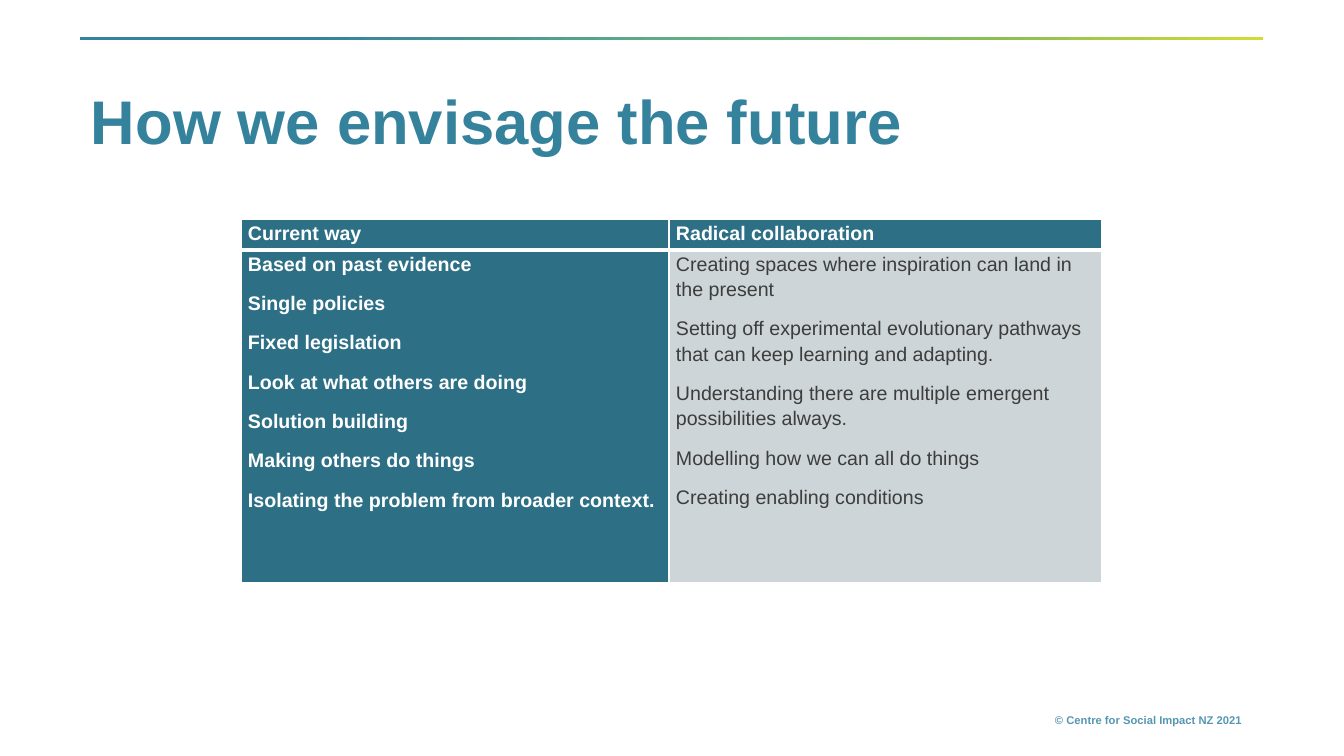
import dataclasses

import lxml.etree
import pptx
import pptx.dml.color
import pptx.enum.shapes
import pptx.enum.text
import pptx.oxml
import pptx.oxml.ns
import pptx.util

EMU_PER_PX = 914400 / 100.8


@dataclasses.dataclass(frozen=True)
class Theme:
    font: str = "Arial"
    title: str = "35829C"
    footer: str = "5596B2"
    header: str = "2D7086"
    panel: str = "CDD5D9"
    dark: str = "3C3D3C"
    white: str = "FFFFFF"
    rule: tuple = ((0, "35839C"), (20, "35839C"), (59, "69BA80"), (78, "8CBF52"), (100, "D2DC36"))
    title_size: int = 44
    table_size: int = 14
    footer_size: int = 8


def px(value):
    return pptx.util.Emu(round(value * EMU_PER_PX))


def rgb(color):
    return pptx.dml.color.RGBColor.from_string(color)


class SlideBuilder:
    def __init__(self, presentation, theme):
        self.theme = theme
        self.slide = presentation.slides.add_slide(presentation.slide_layouts[6])

    def styled_run(self, paragraph, text, size, color, bold=True):
        run = paragraph.add_run()
        run.text = text
        run.font.name = self.theme.font
        run.font.size = pptx.util.Pt(size)
        run.font.bold = bold
        run.font.color.rgb = rgb(color)

    def text_box(self, box, text, size, color, align, line_spacing=1.0):
        frame = self.slide.shapes.add_textbox(*map(px, box)).text_frame
        frame.word_wrap = True
        frame.vertical_anchor = pptx.enum.text.MSO_ANCHOR.MIDDLE
        paragraph = frame.paragraphs[0]
        paragraph.alignment = align
        paragraph.line_spacing = line_spacing
        self.styled_run(paragraph, text, size, color)

    def gradient_rule(self, box):
        shape = self.slide.shapes.add_shape(pptx.enum.shapes.MSO_SHAPE.RECTANGLE, *map(px, box))
        shape.shadow.inherit = False
        shape.line.fill.background()
        shape.fill.gradient()
        shape.fill.gradient_angle = 0
        stops = shape._element.spPr.find(".//" + pptx.oxml.ns.qn("a:gsLst"))
        for stop in list(stops):
            stops.remove(stop)
        for position, color in self.theme.rule:
            stop = lxml.etree.SubElement(stops, pptx.oxml.ns.qn("a:gs"), pos=str(position * 1000))
            lxml.etree.SubElement(stop, pptx.oxml.ns.qn("a:srgbClr"), val=color)

    def borders(self, cell, widths):
        properties = cell._tc.get_or_add_tcPr()
        for index, (side, width) in enumerate(zip("LRTB", widths)):
            line = pptx.oxml.parse_xml(
                f'<a:ln{side} {pptx.oxml.ns.nsdecls("a")} w="{pptx.util.Pt(width)}">'
                f'<a:solidFill><a:srgbClr val="{self.theme.white}"/></a:solidFill></a:ln{side}>'
            )
            properties.insert(index, line)

    def cell(self, cell, lines, fill, color, bold, widths):
        cell.fill.solid()
        cell.fill.fore_color.rgb = rgb(fill)
        cell.margin_left = cell.margin_right = px(7)
        cell.margin_top = cell.margin_bottom = 0
        self.borders(cell, widths)
        for index, line in enumerate(lines):
            frame = cell.text_frame
            paragraph = frame.add_paragraph() if index else frame.paragraphs[0]
            paragraph.line_spacing = 1.15
            paragraph.space_after = pptx.util.Pt(10)
            self.styled_run(paragraph, line, self.theme.table_size, color, bold)

    def comparison(self, left, top, columns, rows, content):
        theme = self.theme
        box = (left, top, sum(columns), sum(rows))
        table = self.slide.shapes.add_table(len(rows), len(columns), *map(px, box)).table
        for row, height in zip(table.rows, rows):
            row.height = px(height)
        for index, (width, (heading, lines)) in enumerate(zip(columns, content)):
            table.columns[index].width = px(width)
            self.cell(table.cell(0, index), [heading], theme.header, theme.white, True, (1, 1, 1, 3))
            fill, color = (theme.panel, theme.dark) if index else (theme.header, theme.white)
            self.cell(table.cell(1, index), lines, fill, color, index == 0, (1, 1, 3, 1))


CONTENT = [
    ("Current way", [
        "Based on past evidence",
        "Single policies",
        "Fixed legislation",
        "Look at what others are doing",
        "Solution building",
        "Making others do things",
        "Isolating the problem from broader context.",
    ]),
    ("Radical collaboration", [
        "Creating spaces where inspiration can land in the present",
        "Setting off experimental evolutionary pathways that can keep learning and adapting.",
        "Understanding there are multiple emergent possibilities always.",
        "Modelling how we can all do things",
        "Creating enabling conditions",
    ]),
]


def main():
    presentation = pptx.Presentation()
    presentation.slide_width = px(1344)
    presentation.slide_height = px(756)
    theme = Theme()
    builder = SlideBuilder(presentation, theme)
    align = pptx.enum.text.PP_ALIGN
    builder.text_box((896, 708, 356, 24), "© Centre for Social Impact NZ 2021",
                     theme.footer_size, theme.footer, align.RIGHT)
    builder.gradient_rule((80, 37, 1183, 3))
    builder.text_box((81, 78, 1182, 93), "How we envisage the future",
                     theme.title_size, theme.title, align.LEFT, 0.9)
    builder.comparison(241, 219, (428, 433), (31, 333), CONTENT)
    presentation.save("out.pptx")


if __name__ == "__main__":
    main()
